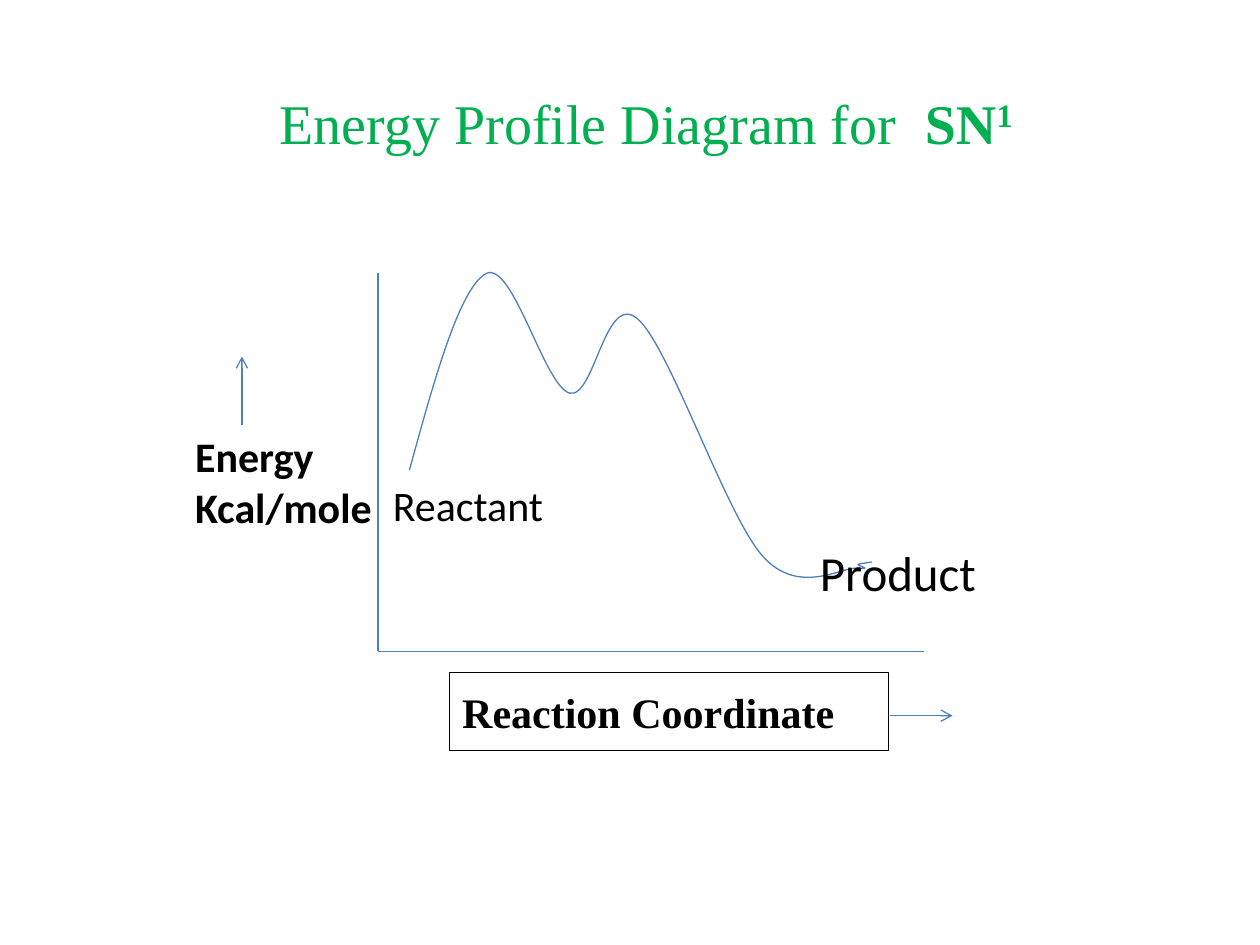
from lxml.etree import SubElement
from pptx import Presentation
from pptx.dml.color import RGBColor
from pptx.enum.shapes import MSO_CONNECTOR, MSO_SHAPE
from pptx.enum.text import MSO_ANCHOR, MSO_AUTO_SIZE, PP_ALIGN
from pptx.oxml.ns import qn
from pptx.util import Inches, Pt

BLUE, GREEN, BLACK, WHITE = "4B7EBC", "00B050", "000000", "FFFFFF"
SERIF, SANS = "Times New Roman", "Calibri"

# Curve in hundredths of an inch
CURVE_BOX = (325, 217, 367, 242)
CURVE_START = (325, 373)
# Each segment: two control points and an end point
CURVE = [
    ((345, 300), (365, 228), (386, 217)),
    ((407, 207), (432, 306), (452, 312)),
    ((472, 317), (480, 231), (506, 253)),
    ((531, 274), (576, 408), (605, 441)),
    ((634, 474), (669, 449), (681, 451)),
    ((694, 452), (680, 449), (681, 448)),
    ((683, 447), (687, 447), (692, 446)),
]


def rgb(color):
    return RGBColor.from_string(color)


def set_line(sp, color, width):
    sp.line.color.rgb = rgb(color)
    sp.line.width = Pt(width)


def place(sp, x, y, w, h):
    sp.left, sp.top, sp.width, sp.height = map(Inches, (x, y, w, h))


def add_run(p, text, size, font, color=BLACK, bold=False):
    r = p.add_run()
    r.text = text
    r.font.size, r.font.name, r.font.bold = Pt(size), font, bold
    r.font.color.rgb = rgb(color)
    return r


def set_frame(tf, wrap):
    tf.word_wrap = wrap
    tf.auto_size = MSO_AUTO_SIZE.SHAPE_TO_FIT_TEXT
    tf.vertical_anchor = MSO_ANCHOR.TOP


def add_title(s):
    title = s.shapes.title
    place(title, 2.12, 0.65, 6.09, 0.64)
    set_frame(title.text_frame, False)
    p = title.text_frame.paragraphs[0]
    p.alignment = PP_ALIGN.LEFT
    add_run(p, "Energy Profile Diagram for  ", 32, SERIF, GREEN)
    add_run(p, "SN", 32, SERIF, GREEN, True)
    r = add_run(p, "1", 32, SERIF, GREEN, True)
    r.font._element.set("baseline", "30000")


def add_label(s, box, lines, size, bold=False, wrap=True):
    tf = s.shapes.add_textbox(*map(Inches, box)).text_frame
    set_frame(tf, wrap)
    for i, line in enumerate(lines):
        p = tf.add_paragraph() if i else tf.paragraphs[0]
        add_run(p, line, size, SANS, bold=bold)


def add_line(s, start, end, arrow=False):
    ln = s.shapes.add_connector(MSO_CONNECTOR.STRAIGHT, *map(Inches, start + end))
    set_line(ln, BLUE, 0.75)
    if arrow:
        SubElement(ln.line._get_or_add_ln(), qn("a:tailEnd"), type="arrow")
    SubElement(ln._element.spPr, qn("a:effectLst"))


def add_axis_box(s):
    sp = s.shapes.add_shape(MSO_SHAPE.RECTANGLE, *map(Inches, (3.57, 5.34, 3.48, 0.62)))
    sp.shadow.inherit = False
    sp.fill.solid()
    sp.fill.fore_color.rgb = rgb(WHITE)
    set_line(sp, BLACK, 0.5)
    sp.text_frame.word_wrap = True
    sp.text_frame.vertical_anchor = MSO_ANCHOR.TOP
    p = sp.text_frame.paragraphs[0]
    p.alignment, p.line_spacing, p.space_after = PP_ALIGN.LEFT, 1.15, Pt(10)
    add_run(p, "Reaction Coordinate", 24, SERIF, bold=True)


def add_curve(s):
    """Build a freeform through the end points, then bend its segments."""
    builder = s.shapes.build_freeform(*CURVE_START, scale=Inches(1) / 100)
    builder.add_line_segments([seg[-1] for seg in CURVE], close=False)
    sp = builder.convert_to_shape()
    left, top, width, height = CURVE_BOX
    place(sp, left / 100, top / 100, width / 100, height / 100)
    path = next(sp._element.iter(qn("a:path")))
    path.set("w", str(width))
    path.set("h", str(height))
    for line in path.findall(qn("a:lnTo")):
        path.remove(line)
    for seg in CURVE:
        bend = SubElement(path, qn("a:cubicBezTo"))
        for x, y in seg:
            SubElement(bend, qn("a:pt"), x=str(x - left), y=str(y - top))
    sp.shadow.inherit = False
    sp.fill.background()
    set_line(sp, BLUE, 0.75)


def main():
    prs = Presentation()
    prs.slide_width, prs.slide_height = Inches(10), Inches(7.5)
    s = prs.slides.add_slide(prs.slide_layouts[5])
    add_title(s)
    add_line(s, (7.33, 5.17), (3, 5.17))
    add_axis_box(s)
    add_line(s, (3, 2.17), (3, 5.17))
    add_curve(s)
    add_label(s, (3.02, 3.76, 1.41, 0.5), ["Reactant"], 24, wrap=False)
    add_label(s, (6.41, 4.26, 2, 0.57), ["Product"], 28)
    add_label(s, (1.45, 3.37, 1.8, 0.91), ["Energy", "Kcal/mole"], 24, bold=True)
    add_line(s, (1.92, 3.37), (1.92, 2.83), arrow=True)
    add_line(s, (7.06, 5.68), (7.56, 5.68), arrow=True)
    prs.save("out.pptx")


if __name__ == "__main__":
    main()
